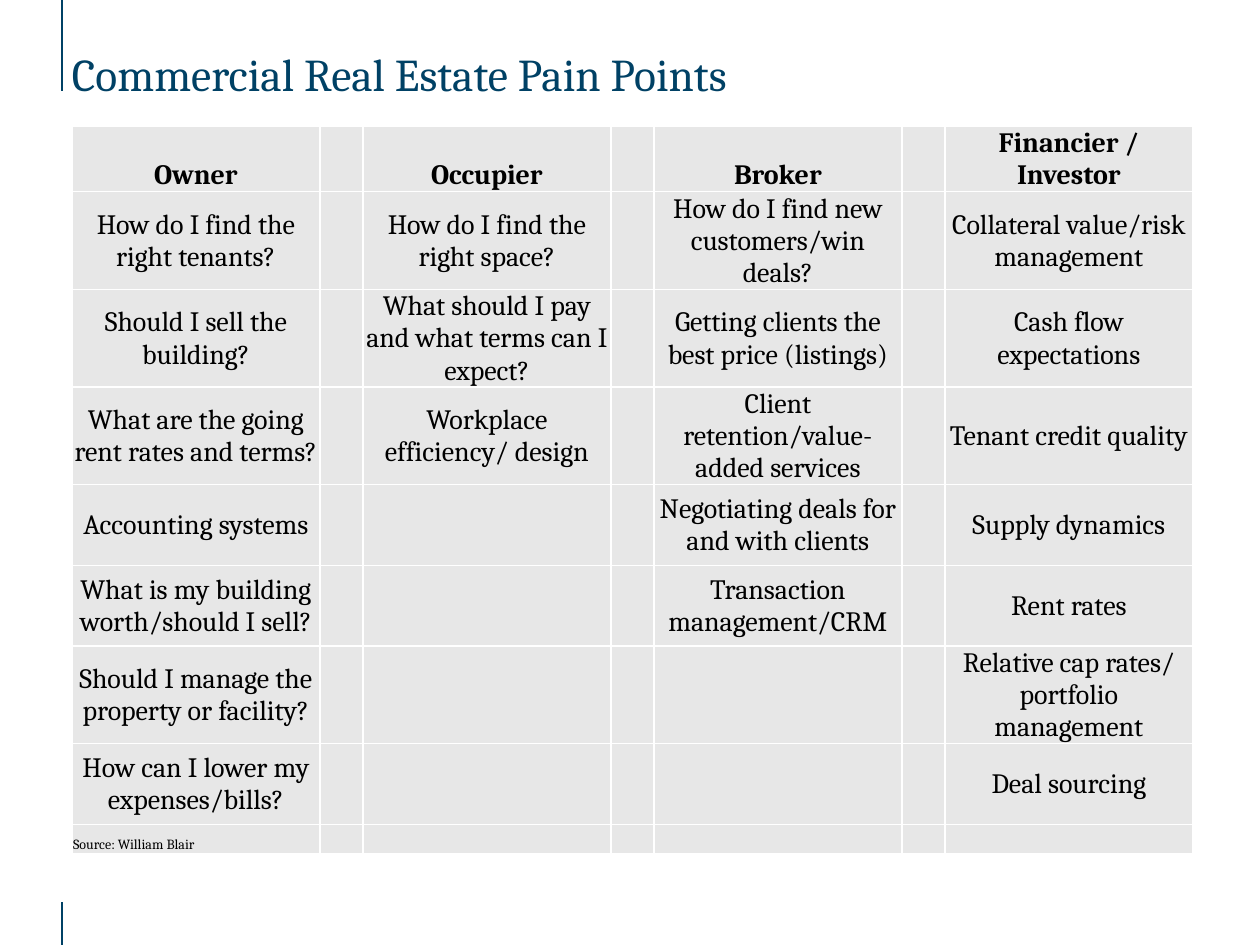
from typing import NamedTuple

from lxml.etree import SubElement
from pptx import Presentation
from pptx.dml.color import RGBColor
from pptx.enum.shapes import MSO_CONNECTOR
from pptx.enum.text import MSO_ANCHOR, MSO_AUTO_SIZE, PP_ALIGN
from pptx.oxml import parse_xml
from pptx.oxml.ns import nsdecls, qn
from pptx.util import Inches, Pt

FONT = "Cambria"
NAVY, BLACK, GREY, WHITE = "004165", "000000", "E7E7E7", "FFFFFF"
LEFT, WIDTH = 0.57, 8.93
COLUMN_WIDTH, GAP_WIDTH = 1.97, 0.34
SOURCE = "Source: William Blair"
SOURCE_HEIGHT = 0.23


class Audience(NamedTuple):
    name: str
    pain_points: list[str]


class Rule(NamedTuple):
    top: float
    bottom: float


AUDIENCES = [
    Audience("Owner", [
        "How do I find the right tenants?",
        "Should I sell the building?",
        "What are the going rent rates and terms?",
        "Accounting systems",
        "What is my building worth/should I sell?",
        "Should I manage the property or facility?",
        "How can I lower my expenses/bills?",
    ]),
    Audience("Occupier", [
        "How do I find the right space?",
        "What should I pay and what terms can I expect?",
        "Workplace efficiency/ design",
    ]),
    Audience("Broker", [
        "How do I find new customers/win deals?",
        "Getting clients the best price (listings)",
        "Client retention/value-added services",
        "Negotiating deals for and with clients",
        "Transaction management/CRM",
    ]),
    Audience("Financier / Investor", [
        "Collateral value/risk management",
        "Cash flow expectations",
        "Tenant credit quality",
        "Supply dynamics",
        "Rent rates",
        "Relative cap rates/ portfolio management",
        "Deal sourcing",
    ]),
]
ROW_HEIGHTS = [0.52, 0.77, 0.77, 0.77, 0.64, 0.64, 0.77, 0.64, SOURCE_HEIGHT]
MARGIN_RULES = [Rule(-0.01, 0.72), Rule(7.16, 7.5)]


def rgb(color: str) -> RGBColor:
    return RGBColor.from_string(color)


def write(frame, text: str, *, size: float, color: str = BLACK, bold: bool = False,
          align=PP_ALIGN.LEFT, line_spacing=None) -> None:
    paragraph = frame.paragraphs[0]
    paragraph.alignment = align
    if line_spacing:
        paragraph.line_spacing = line_spacing
    run = paragraph.add_run()
    run.text = text
    run.font.name = FONT
    run.font.size = Pt(size)
    run.font.bold = bold
    run.font.color.rgb = rgb(color)


def draw_rule(slide, rule: Rule, x: float = 0.49) -> None:
    line = slide.shapes.add_connector(
        MSO_CONNECTOR.STRAIGHT, Inches(x), Inches(rule.top), Inches(x), Inches(rule.bottom))
    line.line.color.rgb = rgb(NAVY)
    line.line.width = Pt(1)
    SubElement(line._element.spPr, qn("a:effectLst"))


def add_title(slide, text: str) -> None:
    title = slide.shapes.title
    title.left, title.top = Inches(LEFT), Inches(0.11)
    title.width, title.height = Inches(WIDTH), Inches(0.69)
    frame = title.text_frame
    frame.auto_size = MSO_AUTO_SIZE.NONE
    frame.word_wrap = True
    frame.vertical_anchor = MSO_ANCHOR.BOTTOM
    frame.margin_left = frame.margin_right = frame.margin_top = frame.margin_bottom = 0
    write(frame, text, size=26, color=NAVY, line_spacing=Pt(24))


def style_cell(cell) -> None:
    cell.margin_left = cell.margin_right = cell.margin_top = Inches(0.01)
    cell.margin_bottom = 0
    cell.vertical_anchor = MSO_ANCHOR.MIDDLE
    cell.fill.solid()
    cell.fill.fore_color.rgb = rgb(GREY)
    properties = cell._tc.get_or_add_tcPr()
    for index, side in enumerate("LRTB"):
        properties.insert(index, parse_xml(
            f'<a:ln{side} {nsdecls("a")} w="{Pt(1)}"><a:solidFill>'
            f'<a:srgbClr val="{WHITE}"/></a:solidFill></a:ln{side}>'))
    # A small end-of-paragraph size keeps empty cells from stretching their row
    SubElement(cell.text_frame.paragraphs[0]._p, qn("a:endParaRPr"), sz="800")


def add_pain_point_table(slide, audiences: list[Audience]) -> None:
    column_count = 2 * len(audiences) - 1
    table = slide.shapes.add_table(
        len(ROW_HEIGHTS), column_count, Inches(LEFT), Inches(1),
        Inches(WIDTH), Inches(sum(ROW_HEIGHTS))).table
    table.first_row = table.horz_banding = False
    for index, column in enumerate(table.columns):
        column.width = Inches(GAP_WIDTH if index % 2 else COLUMN_WIDTH)
    for row, height in zip(table.rows, ROW_HEIGHTS):
        row.height = Inches(height)
    for cell in table.iter_cells():
        style_cell(cell)

    for index, audience in enumerate(audiences):
        header = table.cell(0, 2 * index)
        header.vertical_anchor = MSO_ANCHOR.BOTTOM
        write(header.text_frame, audience.name, size=16, bold=True, align=PP_ALIGN.CENTER)
        for row_index, pain_point in enumerate(audience.pain_points, start=1):
            write(table.cell(row_index, 2 * index).text_frame, pain_point,
                  size=16, align=PP_ALIGN.CENTER)

    source_cell = table.cell(len(ROW_HEIGHTS) - 1, 0)
    source_cell.vertical_anchor = MSO_ANCHOR.BOTTOM
    write(source_cell.text_frame, SOURCE, size=8)


def main() -> None:
    presentation = Presentation()
    presentation.slide_width, presentation.slide_height = Inches(10), Inches(7.5)
    slide = presentation.slides.add_slide(presentation.slide_layouts.get_by_name("Title Only"))
    for rule in MARGIN_RULES:
        draw_rule(slide, rule)
    add_title(slide, "Commercial Real Estate Pain Points")
    add_pain_point_table(slide, AUDIENCES)
    presentation.save("out.pptx")


if __name__ == "__main__":
    main()
